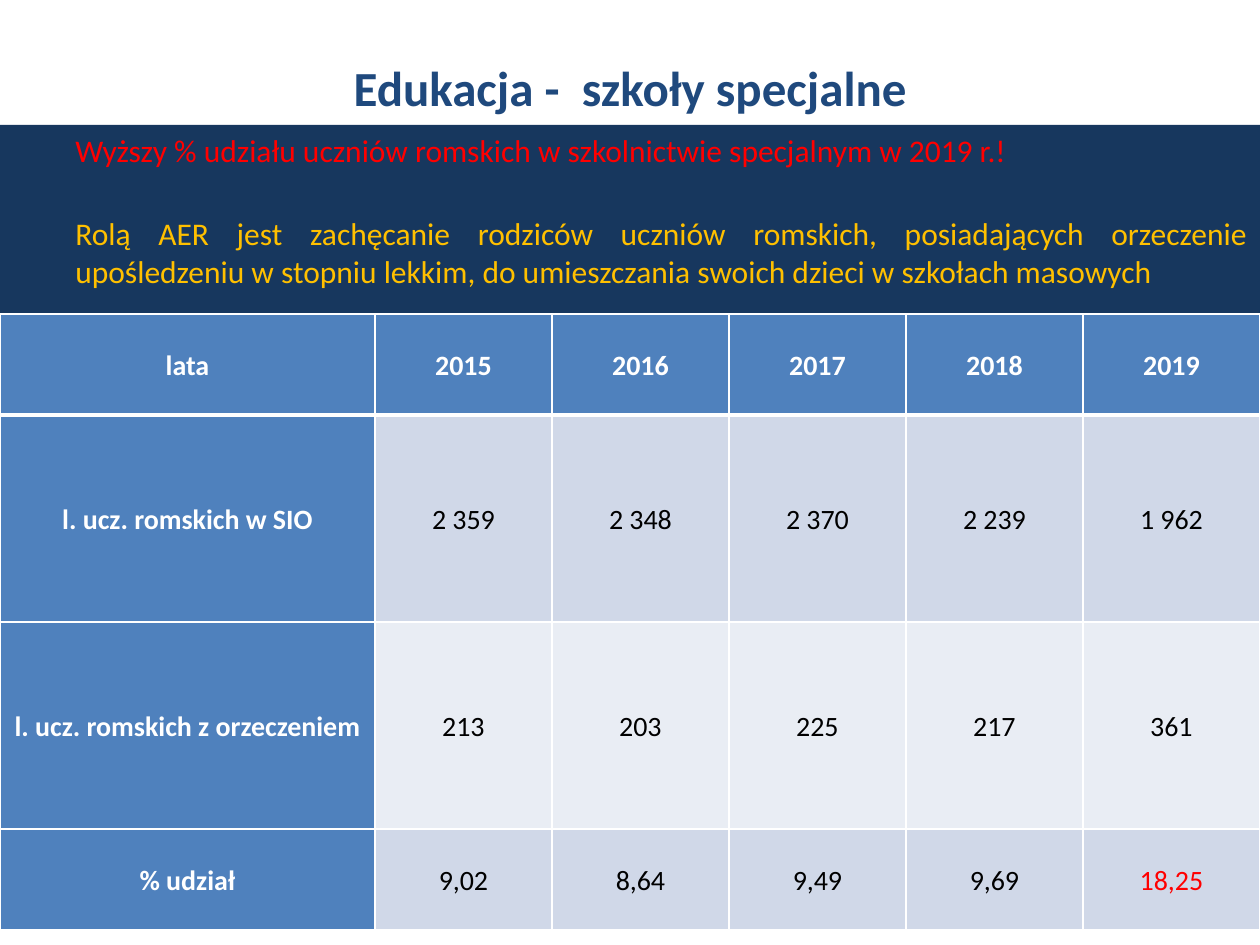
import pptx
import pptx.util
import pptx.dml.color
import pptx.enum.shapes
import pptx.enum.text
import pptx.oxml
import pptx.oxml.ns

RGB = pptx.dml.color.RGBColor
ALIGN = pptx.enum.text.PP_ALIGN
MIDDLE = pptx.enum.text.MSO_ANCHOR.MIDDLE

WHITE = RGB(0xFF, 0xFF, 0xFF)
BLACK = RGB(0, 0, 0)
RED = RGB(0xFF, 0, 0)
GOLD = RGB(0xFF, 0xC0, 0)
TITLE = RGB(0x1F, 0x49, 0x7D)
NAVY = RGB(0x17, 0x37, 0x5E)
BLUE = RGB(0x4F, 0x81, 0xBD)
BANDS = [RGB(0xD0, 0xD8, 0xE8), RGB(0xE9, 0xED, 0xF4)]

HEAD = "Edukacja -  szkoły specjalne"
NOTES = [
    # text, colour, space before in points
    ("Wyższy % udziału uczniów romskich w szkolnictwie specjalnym w 2019 r.!", RED, 0),
    ("Rolą AER jest zachęcanie rodziców uczniów romskich, posiadających orzeczenie "
     "upośledzeniu w stopniu lekkim, do umieszczania swoich dzieci w szkołach masowych",
     GOLD, 26),
]
ROWS = [
    ("lata", "2015", "2016", "2017", "2018", "2019"),
    ("l. ucz. romskich w SIO", "2 359", "2 348", "2 370", "2 239", "1 962"),
    ("l. ucz. romskich z orzeczeniem", "213", "203", "225", "217", "361"),
    ("% udział", "9,02", "8,64", "9,49", "9,69", "18,25"),
]
ALERT = (3, 5)
WIDTHS = [375] + [177] * 5
HEIGHTS = [101, 207, 207, 101]


def px(n):
    return round(n * 914400 / 126)


def box(*spot):
    return [px(n) for n in spot]


def write(para, text, size, color, bold=False, align=ALIGN.CENTER):
    para.alignment = align
    run = para.add_run()
    run.text = text
    run.font.name = "Calibri"
    run.font.size = pptx.util.Pt(size)
    run.font.bold = bold
    run.font.color.rgb = color


def edge(cell, side, width):
    """Draw one white border; call before the cell is filled."""
    cell._tc.get_or_add_tcPr().append(pptx.oxml.parse_xml(
        f'<a:{side} {pptx.oxml.ns.nsdecls("a")} w="{pptx.util.Pt(width)}">'
        f'<a:solidFill><a:srgbClr val="{WHITE}"/></a:solidFill></a:{side}>'))


def add_title(slide):
    frame = slide.shapes.add_textbox(*box(63, 38, 1134, 97)).text_frame
    frame.word_wrap = True
    frame.vertical_anchor = MIDDLE
    write(frame.paragraphs[0], HEAD, 28, TITLE, True)


def add_panel(slide):
    panel = slide.shapes.add_shape(
        pptx.enum.shapes.MSO_SHAPE.RECTANGLE, *box(0, 125, 1260, 804))
    panel.shadow.inherit = False
    panel.fill.solid()
    panel.fill.fore_color.rgb = NAVY
    panel.line.fill.background()
    frame = panel.text_frame
    frame.word_wrap = True
    frame.vertical_anchor = pptx.enum.text.MSO_ANCHOR.TOP
    for i, (text, color, gap) in enumerate(NOTES):
        para = frame.add_paragraph() if i else frame.paragraphs[0]
        para.space_before = pptx.util.Pt(gap)
        para._p.get_or_add_pPr().set("marL", str(px(63)))
        write(para, text, 18, color, align=ALIGN.JUSTIFY)


def add_grid(slide):
    grid = slide.shapes.add_table(
        len(ROWS), len(WIDTHS), *box(0, 314, sum(WIDTHS), sum(HEIGHTS))).table
    for col, width in zip(grid.columns, WIDTHS):
        col.width = px(width)
    for r, (row, height) in enumerate(zip(ROWS, HEIGHTS)):
        grid.rows[r].height = px(height)
        for c, text in enumerate(row):
            cell = grid.cell(r, c)
            label = r == 0 or c == 0
            cell.vertical_anchor = MIDDLE
            cell.margin_left = cell.margin_right = px(9)
            cell.margin_top = cell.margin_bottom = 0
            for side, width in (("lnL", 1), ("lnR", 1),
                                ("lnT", 3 if r == 1 else 1),
                                ("lnB", 3 if r == 0 else 1)):
                edge(cell, side, width)
            cell.fill.solid()
            cell.fill.fore_color.rgb = BLUE if label else BANDS[(r - 1) % 2]
            para = cell.text_frame.paragraphs[0]
            para.line_spacing = 1.06
            color = WHITE if label else RED if (r, c) == ALERT else BLACK
            write(para, text, 16, color, label)


def main():
    deck = pptx.Presentation()
    deck.slide_width, deck.slide_height = box(1260, 945)
    slide = deck.slides.add_slide(deck.slide_layouts[6])
    add_title(slide)
    add_panel(slide)
    add_grid(slide)
    deck.save("out.pptx")


if __name__ == "__main__":
    main()
